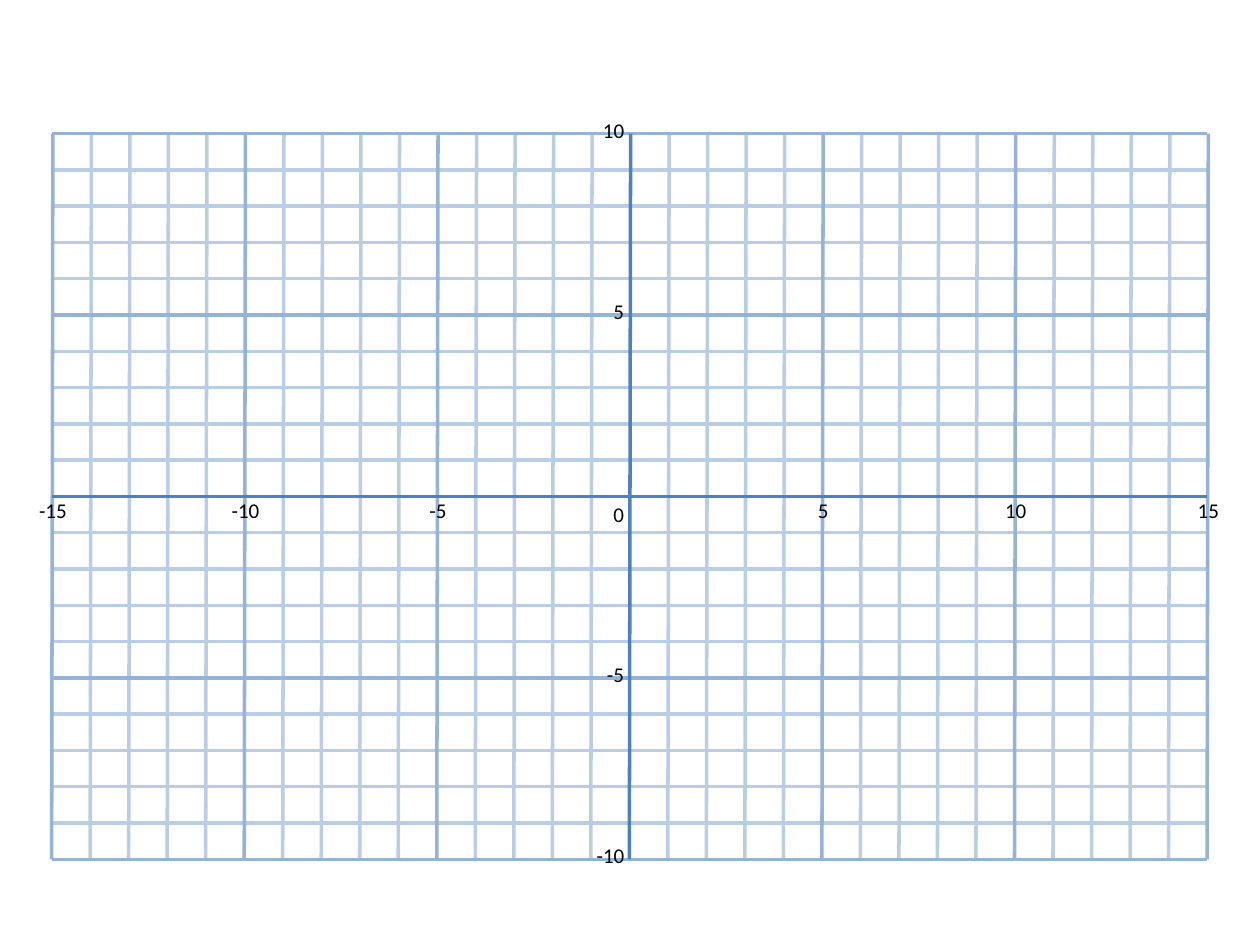
from dataclasses import dataclass

from lxml import etree
from pptx import Presentation
from pptx import util as u
from pptx.dml.color import RGBColor
from pptx.enum import shapes, text
from pptx.oxml import ns

SCALE = 9144
X_MAX, Y_MAX, MAJOR = 15, 10, 5
LABEL_HEIGHT = 30
LABEL_WIDTHS = {"0": 29, "5": 29, "10": 37, "15": 37, "-5": 34, "-10": 42, "-15": 42}


@dataclass(frozen=True)
class Theme:
    """Colours, font and sizes of the slide."""
    minor: str = "B9CDE5"
    major: str = "95B3D7"
    axis: str = "4F81BD"
    ink: str = "000000"
    font: str = "Calibri"
    label_size: int = 12
    line_width: int = 2


@dataclass(frozen=True)
class Box:
    """A region in px, with grid coordinates mapped onto it."""
    left: int
    top: int
    width: int
    height: int

    def x(self, value):
        """Return the px position of an x value."""
        return self.left + self.width * (value + X_MAX) / (2 * X_MAX)

    def y(self, value):
        """Return the px position of a y value."""
        return self.top + self.height * (Y_MAX - value) / (2 * Y_MAX)


THEME = Theme()


def emu(px):
    """Turn px into EMU."""
    return u.Emu(round(px * SCALE))


def add_line(slide, start, end, color):
    """Draw one shadowless straight line."""
    ends = [emu(px) for px in (*start, *end)]
    line = slide.shapes.add_connector(shapes.MSO_CONNECTOR.STRAIGHT, *ends)
    line.line.color.rgb = RGBColor.from_string(color)
    line.line.width = u.Pt(THEME.line_width)
    etree.SubElement(line._element.spPr, ns.qn("a:effectLst"))


def add_label(slide, value, left, top):
    """Write one centred axis number."""
    label = str(value)
    sp = slide.shapes.add_textbox(
        emu(left), emu(top), emu(LABEL_WIDTHS[label]), emu(LABEL_HEIGHT))
    tf = sp.text_frame
    tf.word_wrap = False
    tf.auto_size = text.MSO_AUTO_SIZE.SHAPE_TO_FIT_TEXT
    p = tf.paragraphs[0]
    p.alignment = text.PP_ALIGN.CENTER
    r = p.add_run()
    r.text = label
    r.font.name = THEME.font
    r.font.size = u.Pt(THEME.label_size)
    r.font.color.rgb = RGBColor.from_string(THEME.ink)


def line_color(value):
    """Pick the colour of the grid line at a value."""
    if value == 0:
        return THEME.axis
    return THEME.minor if value % MAJOR else THEME.major


def add_grid(slide, box):
    """Draw minor lines, then major lines, then the axes."""
    right, bottom = box.left + box.width, box.top + box.height
    for color in (THEME.minor, THEME.major, THEME.axis):
        for value in range(-X_MAX, X_MAX + 1):
            if line_color(value) == color:
                x = box.x(value)
                add_line(slide, (x, box.top), (x - 1, bottom), color)
        for value in range(-Y_MAX, Y_MAX + 1):
            if line_color(value) == color:
                y = box.y(value)
                add_line(slide, (box.left - 1, y), (right - 1, y), color)


def add_axis_labels(slide, box):
    """Number the major lines along both axes and the origin."""
    edge = box.x(0) + 5
    for value in range(-X_MAX, X_MAX + 1, MAJOR):
        width = LABEL_WIDTHS[str(value)]
        if value:
            add_label(slide, value, box.x(value) - width / 2, box.y(0) - 4)
        else:
            add_label(slide, value, edge - width, box.y(0) - 1)
    for value in range(-Y_MAX, Y_MAX + 1, MAJOR):
        if value:
            width = LABEL_WIDTHS[str(value)]
            add_label(slide, value, edge - width, box.y(value) - 18)


def main():
    """Build the coordinate plane slide."""
    prs = Presentation()
    prs.slide_width, prs.slide_height = emu(1000), emu(750)
    slide = prs.slides.add_slide(prs.slide_layouts[6])
    plane = Box(42, 106, 917, 576)
    add_grid(slide, plane)
    add_axis_labels(slide, plane)
    prs.save("out.pptx")


if __name__ == "__main__":
    main()
